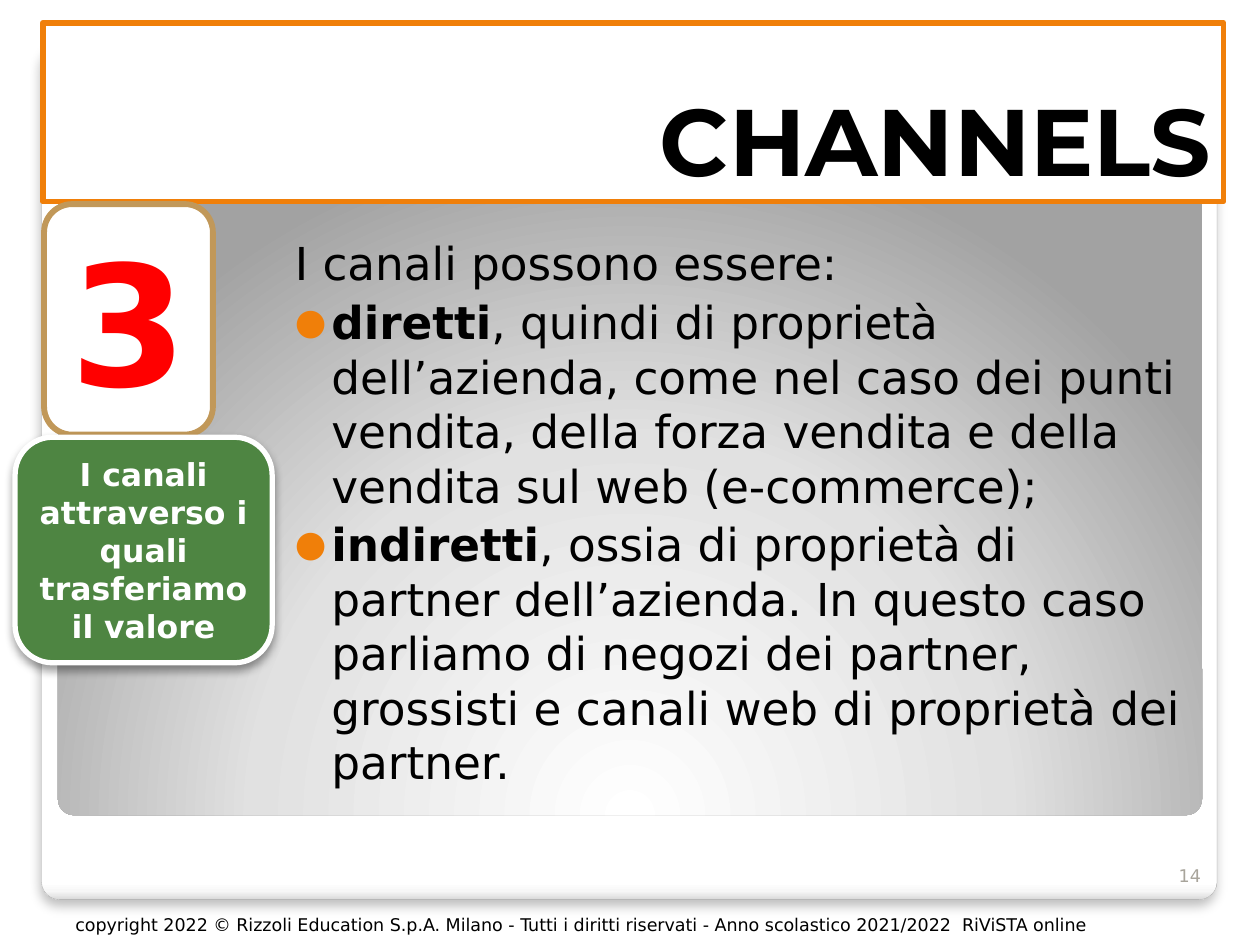
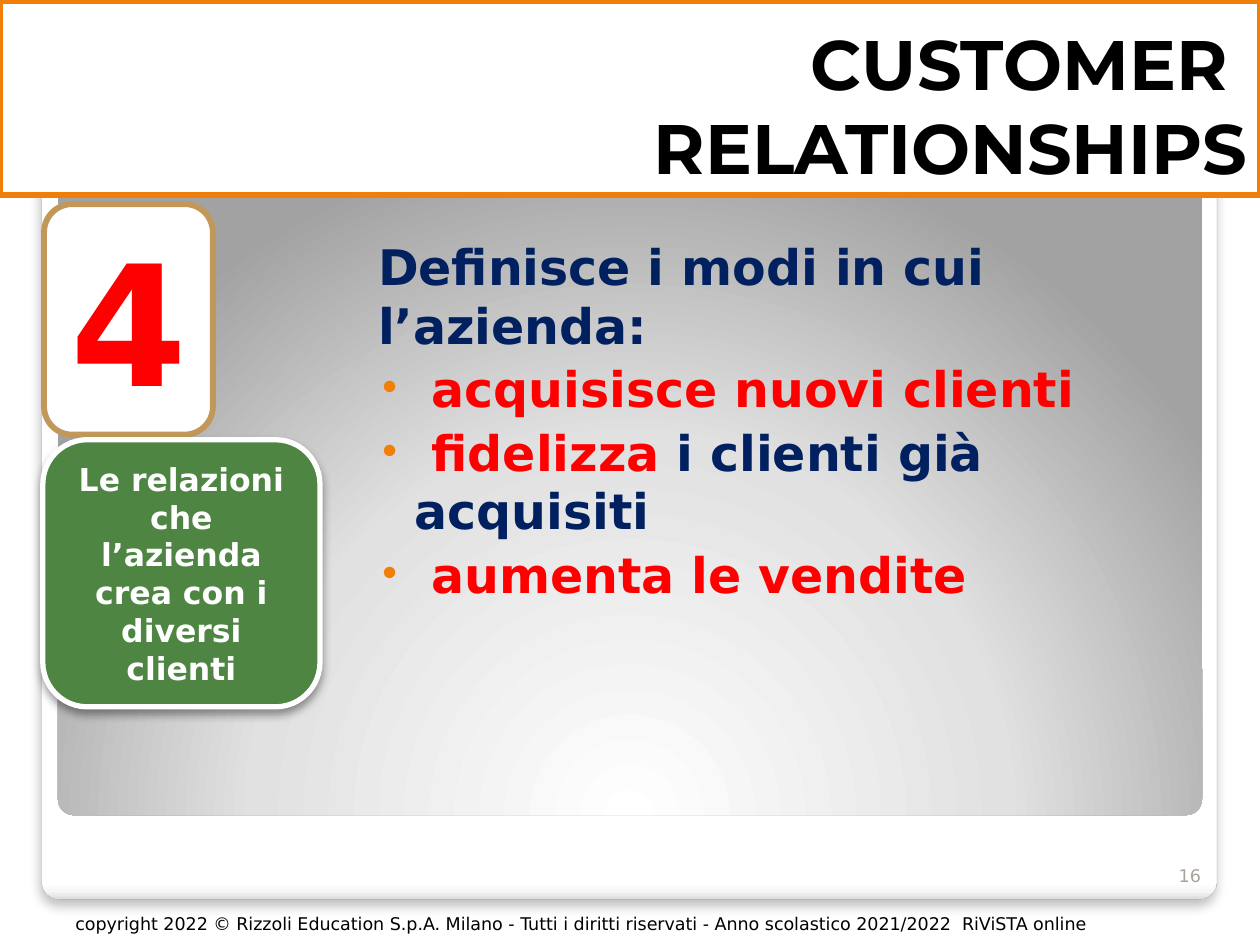
from dataclasses import dataclass

from lxml import etree
from pptx import Presentation
from pptx.dml.color import RGBColor
from pptx.enum.shapes import MSO_SHAPE
from pptx.enum.text import MSO_ANCHOR, MSO_AUTO_SIZE, PP_ALIGN
from pptx.oxml import parse_xml
from pptx.oxml.ns import nsdecls, qn
from pptx.util import Inches, Pt

ROUND = MSO_SHAPE.ROUNDED_RECTANGLE
TOP, MIDDLE, BOTTOM = MSO_ANCHOR.TOP, MSO_ANCHOR.MIDDLE, MSO_ANCHOR.BOTTOM
LEFT, CENTER, RIGHT = PP_ALIGN.LEFT, PP_ALIGN.CENTER, PP_ALIGN.RIGHT


@dataclass(frozen=True)
class Theme:
    head: str = "Montserrat"
    face: str = "DejaVu Sans"
    white: str = "FFFFFF"
    black: str = "000000"
    orange: str = "F07F09"
    tan: str = "C19859"
    green: str = "4E8542"
    red: str = "FF0000"
    navy: str = "002060"
    edge: str = "A4A4A4"
    page: str = "A8A49B"
    digit: int = 96
    label: int = 18
    small: int = 10
    rule: float = 3.35


T = Theme()
COPY = ("copyright 2022 © Rizzoli Education S.p.A. Milano - Tutti i diritti riservati"
        " - Anno scolastico 2021/2022  RiViSTA online")
CARD = ([(0, "FFFFFF"), (98, "FFFFFF"), (99, "F7F7F7"), (100, "DADADA")],
        '<a:lin ang="5400000" scaled="0"/>')
GLOW = ([(0, "FFFFFF"), (55, "E1E1E1"), (100, "A2A2A2")],
        '<a:path path="circle"><a:fillToRect l="50000" t="175000" r="50000" b="-75000"/></a:path>')

# Places are left, top, width, height in hundredths of the slide.
PAGES = [
    dict(title="CHANNELS", size=54, head=(3.4, 2.4, 93.7, 18.93),
         digit="3", label="I canali attraverso i quali trasferiamo il valore",
         tag=(1.2, 46.27, 20.4, 23.87),
         body=(21.4, 23.6, 74.3, 63.33), type=25.9, color=T.black, bold=False, mark="●",
         lines=[
             ["I canali possono essere:"],
             [("diretti", T.black, True), ", quindi di proprietà dell’azienda, come nel caso dei "
              "punti vendita, della forza vendita e della vendita sul web (e-commerce);"],
             [("indiretti", T.black, True), ", ossia di proprietà di partner dell’azienda. In "
              "questo caso parliamo di negozi dei partner, grossisti e canali web di proprietà "
              "dei partner."]],
         page="14", foot=94.27),
    dict(title="CUSTOMER \nRELATIONSHIPS", size=40, head=(0, 0.13, 100, 20.53),
         digit="4", label="Le relazioni che l’azienda crea con i diversi clienti",
         tag=(3.4, 46.53, 22, 28.27),
         body=(28, 23.73, 67.7, 40.93), type=28, color=T.navy, bold=True, mark="•",
         lines=[
             ["Definisce i modi in cui l’azienda:"],
             [(" acquisisce nuovi clienti", T.red, True)],
             [(" fidelizza", T.red, True), " i clienti già acquisiti"],
             [(" aumenta le vendite", T.red, True)]],
         page="16", foot=94.13),
]

deck = Presentation()
deck.slide_width, deck.slide_height = Inches(10), Inches(7.5)
COL, ROW = deck.slide_width / 100, deck.slide_height / 100


def write(shape, lines, at=None, size=T.small, color=T.black, bold=False, face=T.face,
          align=LEFT, anchor=TOP, mark=None, gap=0):
    """Fill a shape; a line is a list of runs, each a string or (text, color, bold)."""
    if at:
        x, y, w, h = at
        shape.left, shape.top = round(x * COL), round(y * ROW)
        shape.width, shape.height = round(w * COL), round(h * ROW)
    frame = shape.text_frame
    frame.word_wrap, frame.auto_size = True, MSO_AUTO_SIZE.NONE
    frame.vertical_anchor = anchor
    for row, runs in enumerate(lines):
        para = frame.add_paragraph() if row else frame.paragraphs[0]
        para.alignment = align
        para.space_before = Pt(gap if row else 0)
        props = para._p.get_or_add_pPr()
        dent = Inches(0.29) if mark and row else 0
        props.set("marL", str(dent))
        props.set("indent", str(-dent))
        if dent:
            hue = etree.SubElement(props, qn("a:buClr"))
            etree.SubElement(hue, qn("a:srgbClr"), val=T.orange)
            etree.SubElement(props, qn("a:buSzPct"), val="80000")
            etree.SubElement(props, qn("a:buFont"), typeface=T.face)
            etree.SubElement(props, qn("a:buChar"), char=mark)
        else:
            etree.SubElement(props, qn("a:buNone"))
        for item in runs:
            text, tint, heavy = (item, color, bold) if isinstance(item, str) else item
            for part, piece in enumerate(text.split("\n")):
                if part:
                    para.add_line_break()
                run = para.add_run()
                run.text = piece
                run.font.name, run.font.size, run.font.bold = face, Pt(size), heavy
                run.font.color.rgb = RGBColor.from_string(tint)


def box(slide, at, fill, line=None, width=T.rule, shade=None, curve=None):
    """Add a rounded box; fill is a colour or (stops, direction), shade is
    (opacity, blur, distance)."""
    x, y, w, h = at
    shape = slide.shapes.add_shape(ROUND, round(x * COL), round(y * ROW),
                                   round(w * COL), round(h * ROW))
    if curve:
        shape.adjustments[0] = curve
    props = shape.element.spPr
    if isinstance(fill, str):
        shape.fill.solid()
        shape.fill.fore_color.rgb = RGBColor.from_string(fill)
    else:
        stops = "".join(f'<a:gs pos="{pos * 1000}"><a:srgbClr val="{tint}"/></a:gs>'
                        for pos, tint in fill[0])
        props.insert(2, parse_xml(f'<a:gradFill {nsdecls("a")} rotWithShape="1">'
                                  f'<a:gsLst>{stops}</a:gsLst>{fill[1]}</a:gradFill>'))
    if line:
        shape.line.color.rgb = RGBColor.from_string(line)
        shape.line.width = Pt(width)
    else:
        shape.line.fill.background()
    shape.shadow.inherit = False
    if shade:
        alpha, blur, drop = shade
        props.find(qn("a:effectLst")).append(parse_xml(
            f'<a:outerShdw {nsdecls("a")} blurRad="{Pt(blur)}" dist="{Pt(drop)}" '
            f'dir="5400000" algn="t" rotWithShape="0"><a:srgbClr val="{T.black}">'
            f'<a:alpha val="{alpha * 1000}"/></a:srgbClr></a:outerShdw>'))
    return shape


for page in PAGES:
    slide = deck.slides.add_slide(deck.slide_layouts[1])
    title, body = slide.shapes.title, slide.placeholders[1]

    card = box(slide, (3.3, 4.8, 93.3, 90.4), CARD, T.edge, 0.16, (25, 6, 4), 0.021)
    glow = box(slide, (4.6, 6.27, 90.8, 80), GLOW, curve=0.021)
    for back in (card, glow):
        title.element.addprevious(back.element)

    title.fill.solid()
    title.fill.fore_color.rgb = RGBColor.from_string(T.white)
    title.line.color.rgb = RGBColor.from_string(T.orange)
    title.line.width = Pt(T.rule)
    write(title, [[page["title"]]], at=page["head"], size=page["size"], bold=True,
          face=T.head, align=RIGHT, anchor=BOTTOM)

    write(body, page["lines"], at=page["body"], size=page["type"], color=page["color"],
          bold=page["bold"], mark=page["mark"], gap=2.5)
    body.text_frame.margin_left = Inches(0.2)
    body.text_frame.margin_top = Inches(0.1)

    digit = box(slide, (3.5, 21.6, 13.4, 24.4), T.white, T.tan)
    write(digit, [[page["digit"]]], size=T.digit, color=T.red, bold=True,
          align=CENTER, anchor=MIDDLE)
    tag = box(slide, page["tag"], T.green, T.white, 3, (40, 5.2, 3))
    write(tag, [[page["label"]]], size=T.label, color=T.white, bold=True,
          align=CENTER, anchor=MIDDLE)

    for text, at, color, align in [
        (page["page"], (91.3, 89.07, 5, 5.33), T.page, RIGHT),
        (COPY, (5, page["foot"], 86.3, 5.33), T.black, LEFT),
    ]:
        note = slide.shapes.add_textbox(0, 0, 0, 0)
        write(note, [[text]], at=at, color=color, align=align, anchor=BOTTOM)

deck.save("out.pptx")
